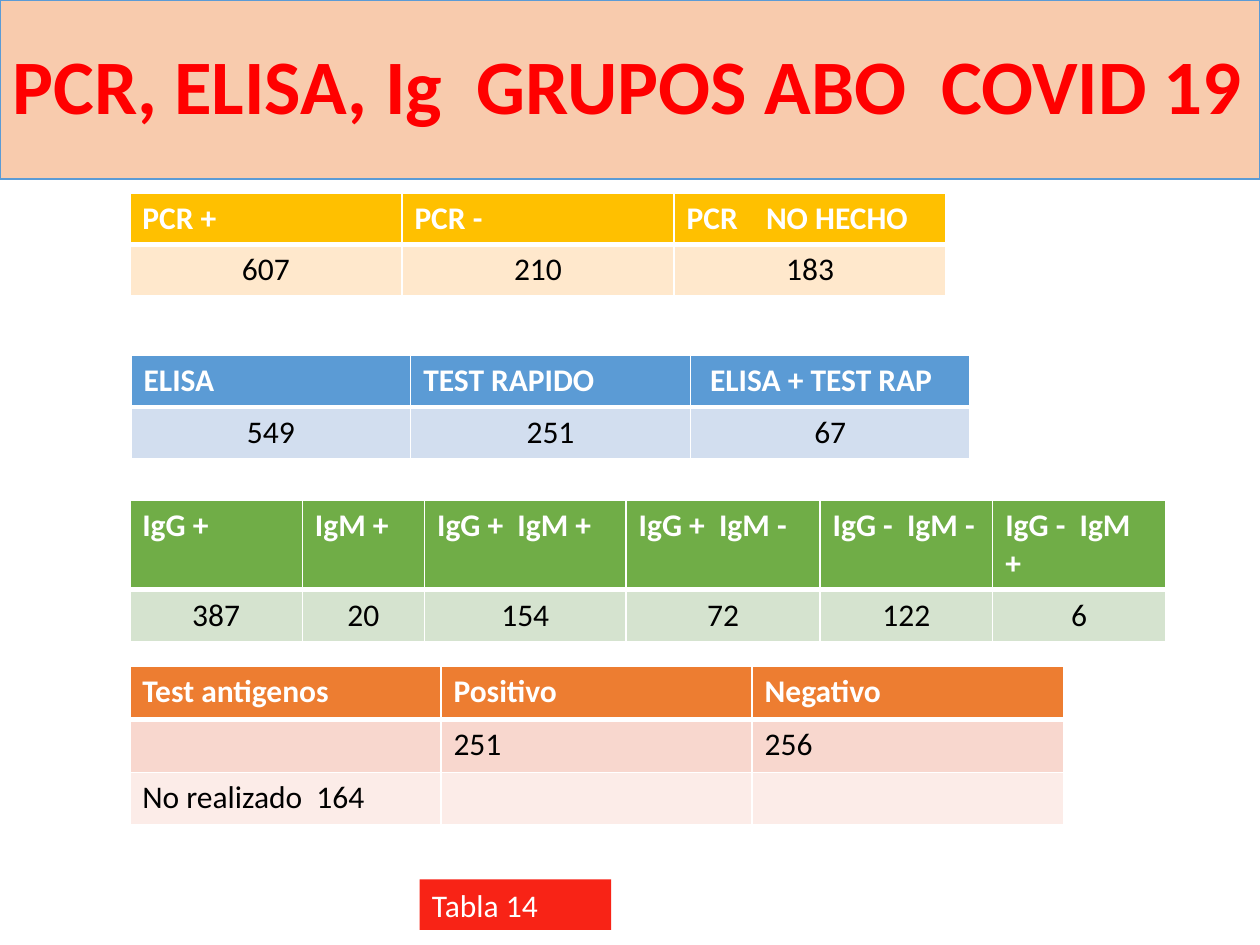
from lxml import etree
from pptx import Presentation
from pptx import util as u
from pptx.dml.color import RGBColor
from pptx.enum import shapes, text
from pptx.oxml.ns import qn

COLORS = {
    "white": "FFFFFF", "black": "000000", "red": "FF0000",
    "peach": "F8CBAD", "outline": "5B9BD5", "label": "F82316",
    "gold": "FFC000", "gold_light": "FFE8CC",
    "blue": "5B9BD5", "blue_light": "D2DEEF",
    "green": "70AD47", "green_light": "D5E3CF",
    "orange": "ED7D31", "orange_light": "F8D7CE", "orange_pale": "FCECE8",
}


def rgb(name):
    return RGBColor.from_string(COLORS[name])


class SlideBuilder:
    font = "Calibri"
    body_size = 18

    def __init__(self, slide):
        self.slide = slide

    def add_text(self, paragraph, content, color, size=body_size, bold=False):
        run = paragraph.add_run()
        run.text = content
        run.font.name = self.font
        run.font.size = u.Pt(size)
        run.font.bold = bold
        run.font.color.rgb = rgb(color)

    def box(self, left, top, width, height, fill, content, color,
            line=None, anchor=text.MSO_ANCHOR.TOP, spacing=1.0, **style):
        panel = self.slide.shapes.add_shape(
            shapes.MSO_SHAPE.RECTANGLE,
            *(u.Inches(v) for v in (left, top, width, height)))
        panel.shadow.inherit = False
        panel.fill.solid()
        panel.fill.fore_color.rgb = rgb(fill)
        if line:
            panel.line.color.rgb = rgb(line)
            panel.line.width = u.Pt(0.75)
        else:
            panel.line.fill.background()
        frame = panel.text_frame
        frame.word_wrap = True
        frame.vertical_anchor = anchor
        paragraph = frame.paragraphs[0]
        paragraph.alignment = text.PP_ALIGN.LEFT
        paragraph.line_spacing = spacing
        self.add_text(paragraph, content, color, **style)

    def borders(self, cell, bottom):
        """Draw white cell edges; only the bottom weight varies, in points."""
        properties = cell._tc.get_or_add_tcPr()
        for side, weight in (("L", 1), ("R", 1), ("T", 1), ("B", bottom)):
            edge = etree.SubElement(properties, qn(f"a:ln{side}"), w=str(u.Pt(weight)))
            solid = etree.SubElement(edge, qn("a:solidFill"))
            etree.SubElement(solid, qn("a:srgbClr"), val=COLORS["white"])

    def tab_stop(self, paragraph, position):
        stops = etree.SubElement(paragraph._p.get_or_add_pPr(), qn("a:tabLst"))
        etree.SubElement(stops, qn("a:tab"), pos=str(u.Inches(position)), algn="l")

    def table(self, left, top, widths, row_height, fills, rows,
              body_align=text.PP_ALIGN.CENTER):
        """Build a table whose first row is the header; fills has one colour per row."""
        grid = self.slide.shapes.add_table(
            len(rows), len(widths), u.Inches(left), u.Inches(top),
            u.Inches(sum(widths)), u.Inches(row_height * len(rows))).table
        grid.first_row = grid.horz_banding = False
        for column, width in zip(grid.columns, widths):
            column.width = u.Inches(width)
        for r, (values, fill) in enumerate(zip(rows, fills)):
            header = r == 0
            grid.rows[r].height = u.Inches(row_height)
            for c, value in enumerate(values):
                cell = grid.cell(r, c)
                self.borders(cell, bottom=3 if header else 1)
                cell.fill.solid()
                cell.fill.fore_color.rgb = rgb(fill)
                if not value:
                    continue
                paragraph = cell.text_frame.paragraphs[0]
                paragraph.alignment = text.PP_ALIGN.LEFT if header else body_align
                if "\t" in value:
                    self.tab_stop(paragraph, 0.63)
                self.add_text(paragraph, value, "white" if header else "black", bold=header)


def main():
    deck = Presentation()
    deck.slide_width, deck.slide_height = u.Inches(10), u.Inches(7.5)
    page = SlideBuilder(deck.slides.add_slide(deck.slide_layouts[6]))

    page.box(0, 0, 10, 1.42, "peach", "PCR, ELISA, Ig  GRUPOS ABO  COVID 19", "red",
             line="outline", anchor=text.MSO_ANCHOR.MIDDLE, spacing=0.9,
             size=44, bold=True)

    page.table(1.03, 1.53, [2.16] * 3, 0.41, ["gold", "gold_light"],
               [["PCR +", "PCR -", "PCR\tNO HECHO"],
                ["607", "210", "183"]])
    page.table(1.04, 2.82, [2.22] * 3, 0.41, ["blue", "blue_light"],
               [["ELISA", "TEST RAPIDO", " ELISA + TEST RAP"],
                ["549", "251", "67"]])
    page.table(1.03, 3.97, [1.37, 0.97, 1.6, 1.54, 1.37, 1.37], 0.41,
               ["green", "green_light"],
               [["IgG +", "IgM +", "IgG +  IgM +", "IgG +  IgM -",
                 "IgG -  IgM -", "IgG -  IgM +"],
                ["387", "20", "154", "72", "122", "6"]])
    page.table(1.03, 5.29, [2.47] * 3, 0.42,
               ["orange", "orange_light", "orange_pale"],
               [["Test antigenos", "Positivo", "Negativo"],
                ["", "251", "256"],
                ["No realizado  164", "", ""]],
               body_align=text.PP_ALIGN.LEFT)

    page.box(3.33, 6.98, 1.52, 0.4, "label", "Tabla 14", "white")

    deck.save("out.pptx")


if __name__ == "__main__":
    main()
